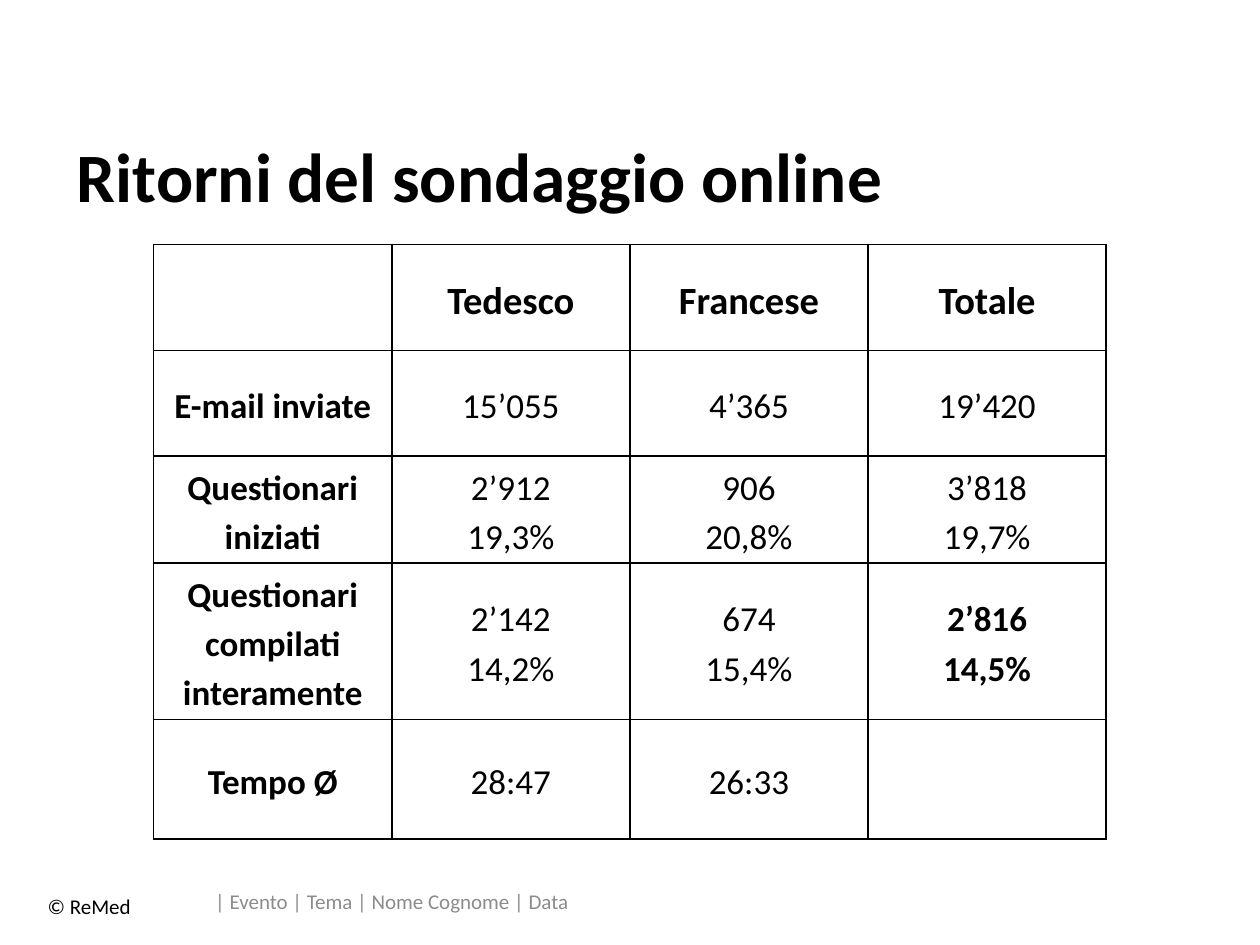
from lxml import etree
from pptx import Presentation
from pptx import util as u
from pptx.dml import color
from pptx.enum import text
from pptx.oxml import ns

COLORS = {"ink": "000000", "muted": "8C8C8C"}
FONT = "Calibri"
ROWS = [
    ["", "Tedesco", "Francese", "Totale"],
    ["E-mail inviate", "15’055", "4’365", "19’420"],
    ["Questionari iniziati", "2’912\n19,3%", "906\n20,8%", "3’818\n19,7%"],
    ["Questionari compilati interamente", "2’142\n14,2%", "674\n15,4%", "2’816\n14,5%"],
    ["Tempo Ø", "28:47", "26:33", ""],
]
ROW_HEIGHTS = [0.84, 0.84, 0.85, 1.24, 0.95]
KEY_RESULT = (3, 3)


def add_run(p, words, size, ink="ink", bold=False):
    """Add one formatted run to a paragraph."""
    r = p.add_run()
    r.text = words
    r.font.name = FONT
    r.font.size = u.Pt(size)
    r.font.bold = bold
    r.font.color.rgb = color.RGBColor.from_string(COLORS[ink])


def add_title(s, box, words):
    """Move the title placeholder into the box and fill it."""
    sp = s.shapes.title
    sp.left, sp.top, sp.width, sp.height = map(u.Inches, box)
    tf = sp.text_frame
    tf.word_wrap = True
    tf.auto_size = text.MSO_AUTO_SIZE.NONE
    tf.vertical_anchor = text.MSO_ANCHOR.MIDDLE
    p = tf.paragraphs[0]
    p.alignment = text.PP_ALIGN.LEFT
    add_run(p, words, 39.6, bold=True)


def add_footer(s, box, words, ink, anchor):
    """Place one line of footer text in the box."""
    tf = s.shapes.add_textbox(*map(u.Inches, box)).text_frame
    tf.word_wrap = True
    tf.vertical_anchor = anchor
    add_run(tf.paragraphs[0], words, 12, ink)


def set_borders(cell):
    """Draw a thin line on all four sides of a cell."""
    tcPr = cell._tc.get_or_add_tcPr()
    for i, side in enumerate(("lnL", "lnR", "lnT", "lnB")):
        ln = etree.Element(ns.qn(f"a:{side}"), w=str(u.Pt(1)))
        fill = etree.SubElement(ln, ns.qn("a:solidFill"))
        etree.SubElement(fill, ns.qn("a:srgbClr"), val=COLORS["ink"])
        tcPr.insert(i, ln)


def fill_cell(cell, words, size, bold):
    """Format a cell and write each line as a centred paragraph."""
    cell.fill.background()
    set_borders(cell)
    cell.vertical_anchor = text.MSO_ANCHOR.MIDDLE
    cell.margin_left = cell.margin_right = u.Inches(0.07)
    cell.margin_top = cell.margin_bottom = 0
    if not words:
        return
    tf = cell.text_frame
    for i, line in enumerate(words.split("\n")):
        p = tf.add_paragraph() if i else tf.paragraphs[0]
        p.alignment = text.PP_ALIGN.CENTER
        p.line_spacing = 1.15
        add_run(p, line, size, bold=bold)


def add_results_table(s, box):
    """Build the survey results table in the box."""
    frame = s.shapes.add_table(len(ROWS), len(ROWS[0]), *map(u.Inches, box))
    table = frame.table
    table.first_row = table.horz_banding = False
    for column in table.columns:
        column.width = u.Inches(box[2] / len(ROWS[0]))
    for i, (row, height) in enumerate(zip(ROWS, ROW_HEIGHTS)):
        table.rows[i].height = u.Inches(height)
        for j, words in enumerate(row):
            bold = i == 0 or j == 0 or (i, j) == KEY_RESULT
            fill_cell(table.cell(i, j), words, 20 if i else 22, bold)


def main():
    """Build the slide and save it."""
    prs = Presentation()
    prs.slide_width, prs.slide_height = u.Inches(10), u.Inches(7.5)
    s = prs.slides.add_slide(prs.slide_layouts[5])
    add_title(s, (0.51, 1.07, 9, 0.63), "Ritorni del sondaggio online")
    add_footer(s, (1.61, 6.95, 4.97, 0.4), "| Evento | Tema | Nome Cognome | Data",
               "muted", text.MSO_ANCHOR.MIDDLE)
    add_footer(s, (0.28, 7.04, 1.34, 0.3), "© ReMed", "ink", text.MSO_ANCHOR.TOP)
    add_results_table(s, (1.22, 1.94, 7.56, sum(ROW_HEIGHTS)))
    prs.save("out.pptx")


if __name__ == "__main__":
    main()
